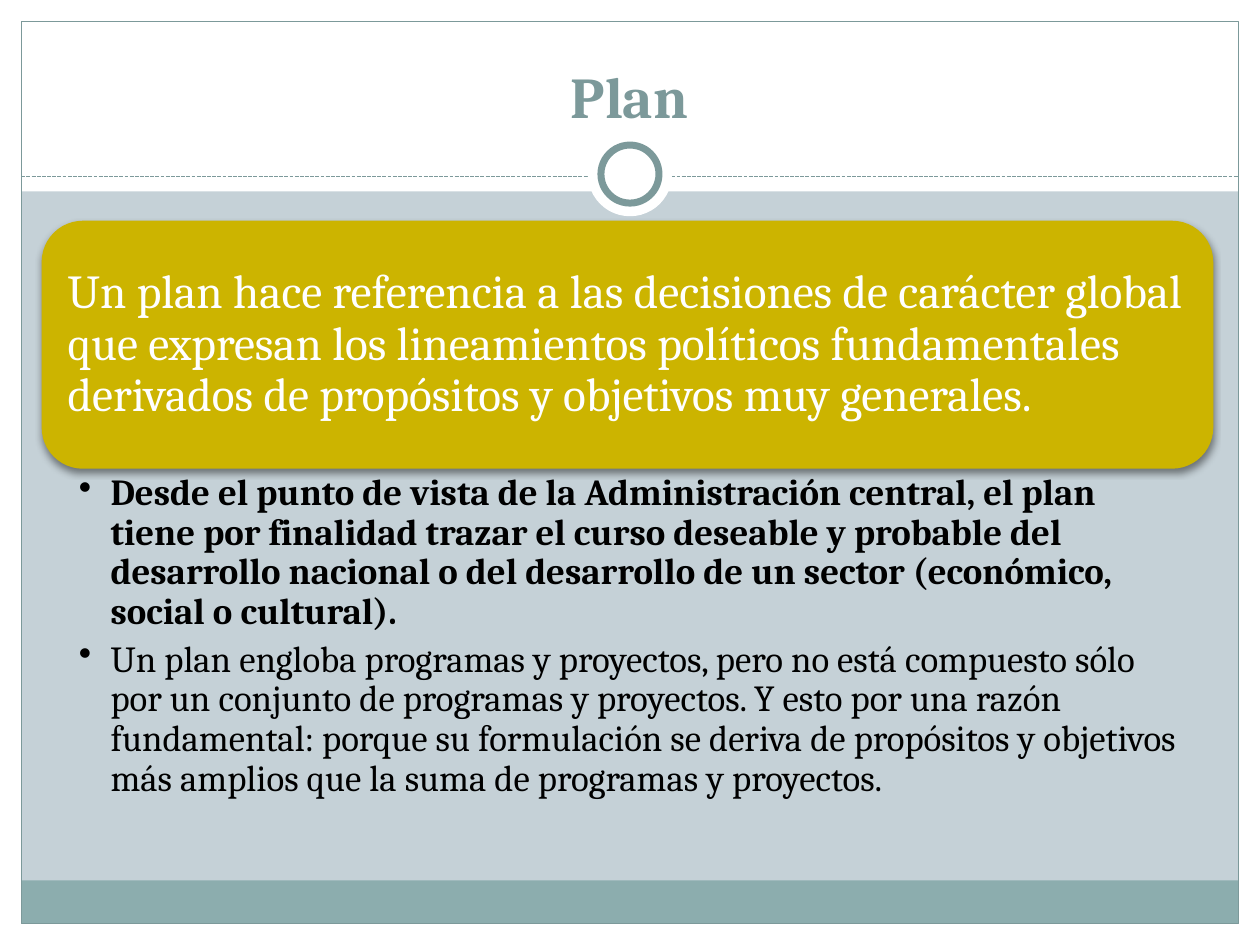
from dataclasses import dataclass

from lxml import etree
from pptx import Presentation
from pptx.dml.color import RGBColor
from pptx.enum.dml import MSO_LINE
from pptx.enum.shapes import MSO_CONNECTOR, MSO_SHAPE
from pptx.enum.text import MSO_ANCHOR, MSO_AUTO_SIZE, PP_ALIGN
from pptx.oxml import parse_xml
from pptx.oxml.ns import nsdecls, qn
from pptx.util import Cm, Pt


@dataclass(frozen=True)
class Theme:
    font: str = "Cambria"
    background: RGBColor = RGBColor(0xC5, 0xD1, 0xD7)
    white: RGBColor = RGBColor(0xFF, 0xFF, 0xFF)
    black: RGBColor = RGBColor(0, 0, 0)
    accent: RGBColor = RGBColor(0x7C, 0x99, 0x9A)
    footer: RGBColor = RGBColor(0x8C, 0xAD, 0xAE)
    callout: RGBColor = RGBColor(0xCC, 0xB4, 0x00)
    title_size: Pt = Pt(33)
    callout_size: Pt = Pt(27)
    body_size: Pt = Pt(21)


theme = Theme()


def add_shape(kind, box, fill=None, line=None, width=0.75):
    """Add a shadowless shape; box is left, top, width, height in cm."""
    sp = s.shapes.add_shape(kind, *map(Cm, box))
    sp.shadow.inherit = False
    if fill is None:
        sp.fill.background()
    else:
        sp.fill.solid()
        sp.fill.fore_color.rgb = fill
    if line is None:
        sp.line.fill.background()
    else:
        sp.line.color.rgb = line
        sp.line.width = Pt(width)
    return sp


def add_text(p, text, size, color, bold=False):
    r = p.add_run()
    r.text = text
    formats = {"name": theme.font, "size": size, "bold": bold}
    for name, value in formats.items():
        setattr(r.font, name, value)
    r.font.color.rgb = color


W, H, EDGE = 25.4, 19.05, 0.43
HEADER, RULE_Y = 3.86, 3.56
LEFT, PANEL_W = 0.84, 23.62

prs = Presentation()
prs.slide_width, prs.slide_height = Cm(W), Cm(H)
s = prs.slides.add_slide(prs.slide_layouts[5])
s.background.fill.solid()
s.background.fill.fore_color.rgb = theme.background

# White margins, footer band and frame
for box, color in [
    ((0, H - EDGE, W, EDGE), theme.white),
    ((0, 0, W, HEADER), theme.white),
    ((0, 0, EDGE, H), theme.white),
    ((W - EDGE, 0, EDGE, H), theme.white),
    ((EDGE, 17.75, W - 2 * EDGE, 0.87), theme.footer),
]:
    add_shape(MSO_SHAPE.RECTANGLE, box, color)
add_shape(MSO_SHAPE.RECTANGLE, (EDGE, EDGE, W - 2 * EDGE, H - 2 * EDGE), line=theme.accent)

# Dashed rule with the ring in its middle
rule = s.shapes.add_connector(MSO_CONNECTOR.STRAIGHT, Cm(EDGE), Cm(RULE_Y), Cm(W - EDGE), Cm(RULE_Y))
rule.line.color.rgb = theme.accent
rule.line.width = Pt(0.75)
rule.line.dash_style = MSO_LINE.SQUARE_DOT
etree.SubElement(rule.element.spPr, qn("a:effectLst"))
for diameter, line in [(1.7, None), (1.17, theme.accent)]:
    box = ((W - diameter) / 2, 3.51 - diameter / 2, diameter, diameter)
    add_shape(MSO_SHAPE.OVAL, box, theme.white, line, 4)

# Title, brought in front of the white header
title = s.shapes.title
title.element.getparent().append(title.element)
title.left, title.top, title.width, title.height = map(Cm, (LEFT, 0.64, 23.7, 2.11))
tf = title.text_frame
tf.vertical_anchor = MSO_ANCHOR.BOTTOM
tf.auto_size = MSO_AUTO_SIZE.NONE
p = tf.paragraphs[0]
p.alignment = PP_ALIGN.CENTER
add_text(p, "Plan", theme.title_size, theme.accent, True)

# Callout with a soft shadow
callout = add_shape(MSO_SHAPE.ROUNDED_RECTANGLE, (LEFT, 4.45, PANEL_W, 5), theme.callout)
callout.element.spPr.find(qn("a:effectLst")).append(parse_xml(
    f'<a:outerShdw {nsdecls("a")} blurRad="{Pt(4)}" dist="{Pt(2)}" dir="5400000" rotWithShape="0">'
    '<a:srgbClr val="000000"><a:alpha val="45000"/></a:srgbClr></a:outerShdw>'))
tf = callout.text_frame
tf.word_wrap = True
tf.vertical_anchor = MSO_ANCHOR.MIDDLE
for side in ("left", "top", "right", "bottom"):
    setattr(tf, f"margin_{side}", Cm(0.28))
p = tf.paragraphs[0]
p.alignment = PP_ALIGN.LEFT
p.line_spacing = 0.9
add_text(p, "Un plan hace referencia a las decisiones de carácter global que expresan los "
            "lineamientos políticos fundamentales derivados de propósitos y objetivos muy "
            "generales.", theme.callout_size, theme.white)

# Bulleted explanation
points = [
    ("Desde el punto de vista de la Administración central, el plan tiene por finalidad "
     "trazar el curso deseable y probable del desarrollo nacional o del desarrollo de un "
     "sector (económico, social o cultural).", True),
    ("Un plan engloba programas y proyectos, pero no está compuesto sólo por un conjunto de "
     "programas y proyectos. Y esto por una razón fundamental: porque su formulación se "
     "deriva de propósitos y objetivos más amplios que la suma de programas y proyectos.", False),
]
tf = s.shapes.add_textbox(Cm(LEFT), Cm(9.45), Cm(PANEL_W), Cm(7.29)).text_frame
tf.word_wrap = True
margins = {"left": 0.75, "top": 0.1, "right": 0.53, "bottom": 0.1}
for side, value in margins.items():
    setattr(tf, f"margin_{side}", Cm(value))
for i, (text, bold) in enumerate(points):
    p = tf.add_paragraph() if i else tf.paragraphs[0]
    p.level = 1
    p.line_spacing = 0.9
    p.space_after = Pt(4.5)
    pPr = p._p.get_or_add_pPr()
    pPr.set("marL", str(Cm(0.64)))
    pPr.set("indent", str(-Cm(0.64)))
    etree.SubElement(pPr, qn("a:buChar")).set("char", "•")
    add_text(p, text, theme.body_size, theme.black, bold)

prs.save("out.pptx")
